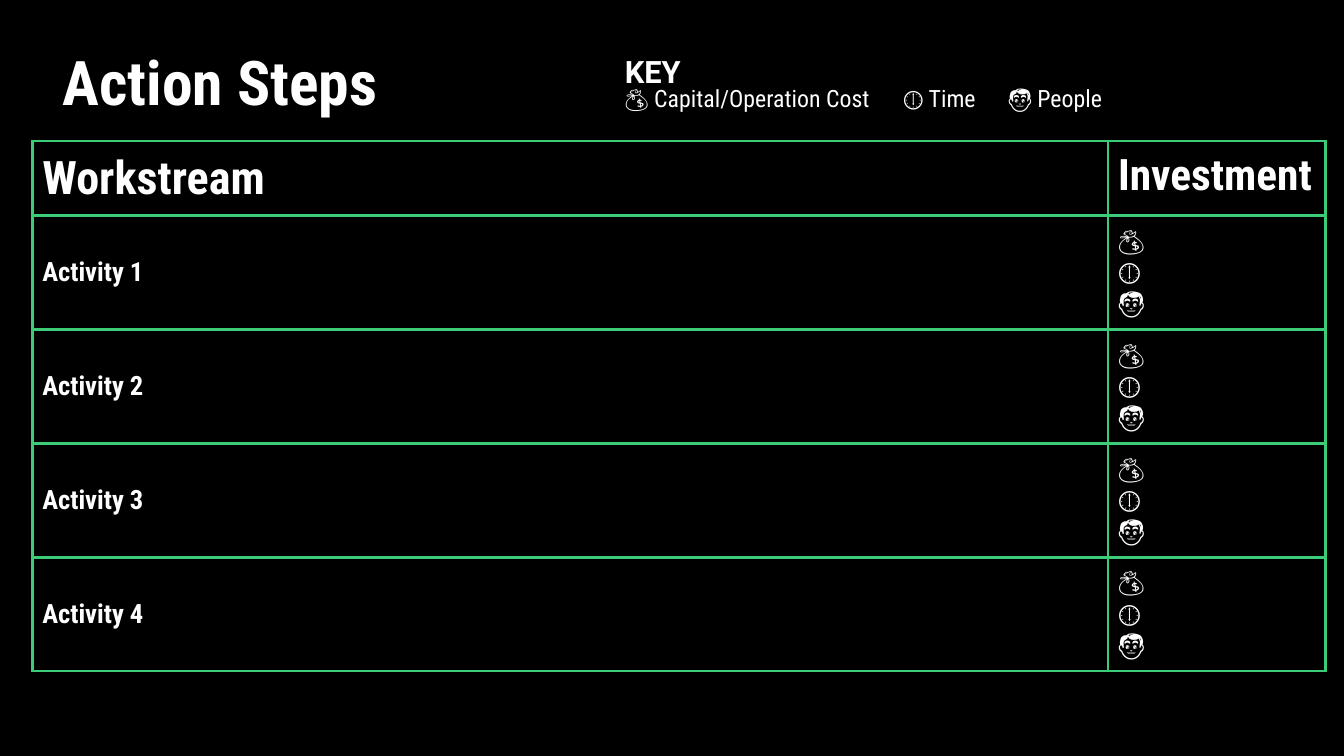
"""Build the Action Steps slide: a key and a table of workstream activities."""
from dataclasses import dataclass

import pptx
import pptx.dml.color
import pptx.enum.text
import pptx.oxml
import pptx.oxml.ns
import pptx.util
from pptx.util import Inches

COLORS = {"background": "000000", "text": "FFFFFF", "border": "3CCC77"}
CONDENSED = "Roboto Condensed"
MONEY, TIME, PEOPLE = "💰", "🕕", "👨"
ICONS = [MONEY, TIME, PEOPLE]
COLUMN_WIDTHS = [10.67, 2.16]
HEADER_HEIGHT, ACTIVITY_HEIGHT = 0.73, 1.13
ACTIVITY_COUNT = 4
KEY_TABS = [2.76, 3.8]
MIDDLE = pptx.enum.text.MSO_ANCHOR.MIDDLE


@dataclass
class CellText:
    """Text of one table cell and its format."""

    lines: list[str]
    size: float = 19
    bold: bool = True
    spacing: float = 1.0


def color(name: str) -> pptx.dml.color.RGBColor:
    """Return the named colour."""
    return pptx.dml.color.RGBColor.from_string(COLORS[name])


def write(paragraph, text: str, *, size: float, bold: bool = False, font: str = CONDENSED,
          spacing: float = 1.0, tabs: tuple | list = ()) -> None:
    """Write formatted text into a paragraph."""
    paragraph.alignment = pptx.enum.text.PP_ALIGN.LEFT
    paragraph.line_spacing = spacing
    paragraph.space_before = pptx.util.Pt(0)
    if tabs:
        stops = "".join(f'<a:tab pos="{Inches(tab)}" algn="l"/>' for tab in tabs)
        paragraph._p.get_or_add_pPr().append(pptx.oxml.parse_xml(
            f'<a:tabLst {pptx.oxml.ns.nsdecls("a")}>{stops}</a:tabLst>'))
    run = paragraph.add_run()
    run.text = text
    run.font.name = font
    run.font.size = pptx.util.Pt(size)
    run.font.bold = bold
    run.font.color.rgb = color("text")


def set_margins(target, horizontal: float = 0.1, vertical: float = 0.1) -> None:
    """Set the inner margins of a text frame or cell."""
    target.margin_left = target.margin_right = Inches(horizontal)
    target.margin_top = target.margin_bottom = Inches(vertical)


def add_borders(cell) -> None:
    """Draw all four borders of a cell."""
    properties = cell._tc.get_or_add_tcPr()
    for side in ("lnL", "lnR", "lnT", "lnB"):
        properties.append(pptx.oxml.parse_xml(
            f'<a:{side} {pptx.oxml.ns.nsdecls("a")} w="{pptx.util.Pt(2.25)}"><a:solidFill>'
            f'<a:srgbClr val="{COLORS["border"]}"/></a:solidFill></a:{side}>'))


def fill_cell(cell, content: CellText) -> None:
    """Format a cell and write its lines."""
    add_borders(cell)
    cell.fill.solid()
    cell.fill.fore_color.rgb = color("background")
    cell.vertical_anchor = MIDDLE
    set_margins(cell)
    frame = cell.text_frame
    for index, line in enumerate(content.lines):
        paragraph = frame.add_paragraph() if index else frame.paragraphs[0]
        write(paragraph, line, size=content.size, bold=content.bold, spacing=content.spacing)


def add_title(slide) -> None:
    """Place and write the slide title."""
    title = slide.shapes.title
    title.left, title.top = Inches(0.52), Inches(0.12)
    title.width, title.height = Inches(11.5), Inches(1.45)
    frame = title.text_frame
    frame.auto_size = pptx.enum.text.MSO_AUTO_SIZE.NONE
    frame.vertical_anchor = MIDDLE
    set_margins(frame, vertical=0.05)
    write(frame.paragraphs[0], "Action Steps", size=44, bold=True, spacing=0.9)


def add_activity_table(slide) -> None:
    """Add the table of activities and their investments."""
    rows = [[CellText(["Workstream"], size=33), CellText(["Investment"], size=31, spacing=0.8)]]
    rows += [[CellText([f"Activity {number}"]), CellText(ICONS, bold=False)]
             for number in range(1, ACTIVITY_COUNT + 1)]
    heights = [HEADER_HEIGHT] + [ACTIVITY_HEIGHT] * ACTIVITY_COUNT
    table = slide.shapes.add_table(
        len(rows), len(COLUMN_WIDTHS), Inches(0.32), Inches(1.4),
        Inches(sum(COLUMN_WIDTHS)), Inches(sum(heights))).table
    for column, width in zip(table.columns, COLUMN_WIDTHS):
        column.width = Inches(width)
    for row, height, contents in zip(table.rows, heights, rows):
        row.height = Inches(height)
        for cell, content in zip(row.cells, contents):
            fill_cell(cell, content)


def add_key(slide) -> None:
    """Add the key that explains the icons."""
    frame = slide.shapes.add_textbox(
        Inches(6.1), Inches(0.42), Inches(7.1), Inches(0.92)).text_frame
    frame.word_wrap = True
    set_margins(frame)
    write(frame.paragraphs[0], "KEY", size=22, bold=True, font="Roboto")
    write(frame.add_paragraph(), f"{MONEY} Capital/Operation Cost\t{TIME} Time\t{PEOPLE} People",
          size=17, spacing=0.8, tabs=KEY_TABS)


def main() -> None:
    """Build and save the presentation."""
    presentation = pptx.Presentation()
    presentation.slide_width, presentation.slide_height = Inches(13.33), Inches(7.5)
    slide = presentation.slides.add_slide(presentation.slide_layouts.get_by_name("Title Only"))
    slide.background.fill.solid()
    slide.background.fill.fore_color.rgb = color("background")
    add_title(slide)
    add_activity_table(slide)
    add_key(slide)
    presentation.save("out.pptx")


if __name__ == "__main__":
    main()
